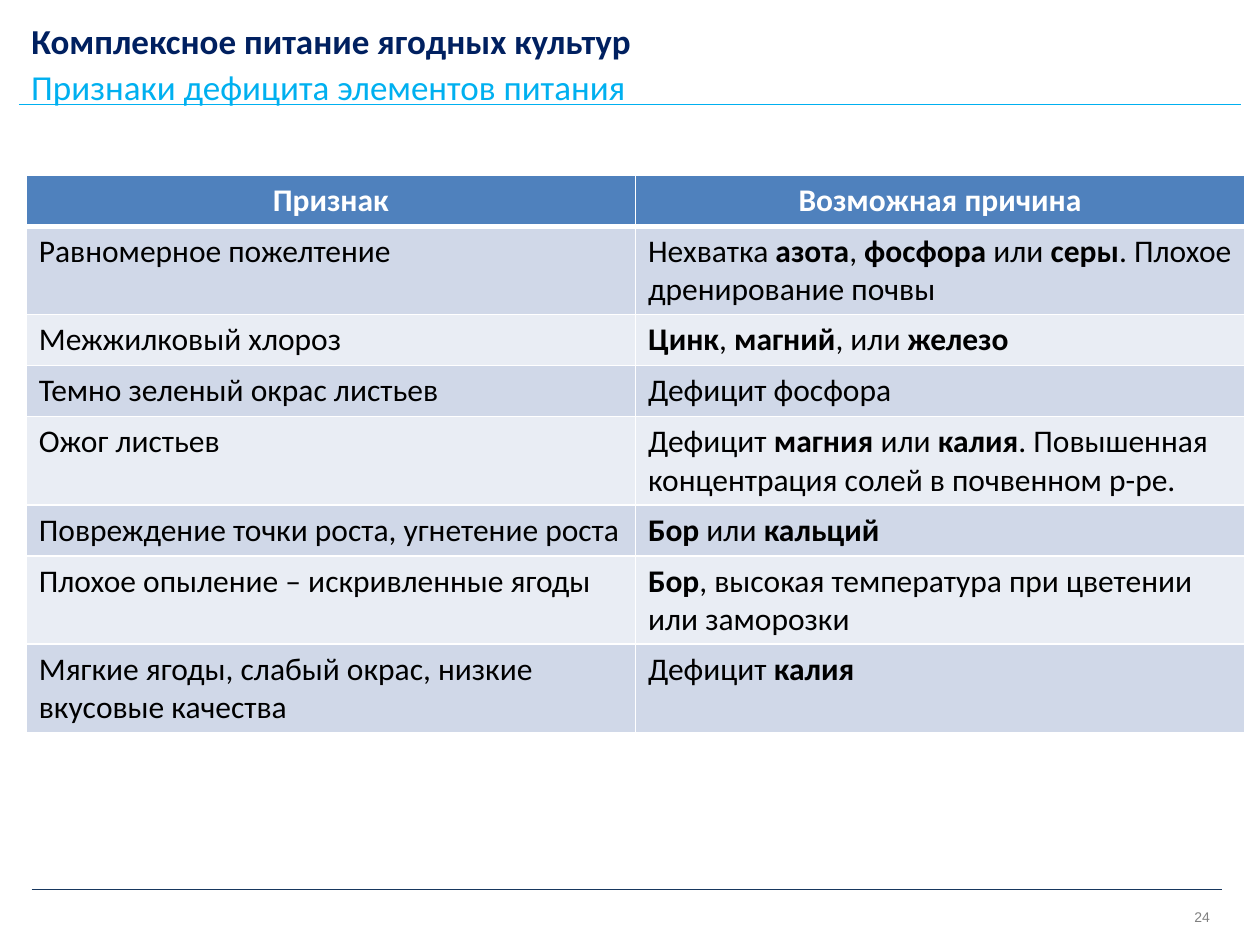
from dataclasses import dataclass
from lxml.etree import SubElement
from pptx import Presentation
from pptx.dml.color import RGBColor
from pptx.enum.shapes import MSO_CONNECTOR
from pptx.enum.text import MSO_ANCHOR, PP_ALIGN
from pptx.oxml.ns import qn
from pptx.util import Cm, Pt

# Content: asterisks enclose the bold words
TITLE = "Комплексное питание ягодных культур"
SUBTITLE = "Признаки дефицита элементов питания"
PAGE_NUMBER = "24"
HEADER = ("Признак", "Возможная причина")
SYMPTOMS = [
    ("Равномерное пожелтение",
     "Нехватка *азота*, *фосфора* или *серы*. Плохое дренирование почвы"),
    ("Межжилковый хлороз", "*Цинк*, *магний*, или *железо*"),
    ("Темно зеленый окрас листьев", "Дефицит фосфора"),
    ("Ожог листьев",
     "Дефицит *магния* или *калия*. Повышенная концентрация солей в почвенном р-ре."),
    ("Повреждение точки роста, угнетение роста", "*Бор* или *кальций*"),
    ("Плохое опыление – искривленные ягоды",
     "*Бор*, высокая температура при цветении или заморозки"),
    ("Мягкие ягоды, слабый окрас, низкие вкусовые качества", "Дефицит *калия*"),
]


@dataclass(frozen=True)
class Theme:
    font: str = "Calibri"
    number_font: str = "Arial"
    navy: str = "002060"
    cyan: str = "00B0F0"
    footer_line: str = "17375E"
    gray: str = "808080"
    white: str = "FFFFFF"
    black: str = "000000"
    header_fill: str = "4F81BD"
    bands: tuple = ("D0D8E8", "E9EDF4")
    heading_size: int = 20
    table_size: int = 18
    number_size: int = 8


THEME = Theme()
LEFT = 0.53
TABLE_TOP, TABLE_WIDTH, ROW_HEIGHT = 3.53, 24.56, 1.03


def style(paragraph, size, color, bold=False, font=THEME.font, align=PP_ALIGN.LEFT):
    paragraph.alignment = align
    paragraph.font.name = font
    paragraph.font.size = Pt(size)
    paragraph.font.bold = bold
    paragraph.font.color.rgb = RGBColor.from_string(color)


def set_heading(heading, text, top, width, color, bold):
    heading.left, heading.top = Cm(LEFT), Cm(top)
    heading.width, heading.height = Cm(width), Cm(0.86)
    frame = heading.text_frame
    frame.word_wrap = True
    frame.vertical_anchor = MSO_ANCHOR.MIDDLE
    frame.margin_left, frame.margin_top = Cm(0.1), Cm(0.1)
    frame.margin_right = frame.margin_bottom = 0
    frame.text = text
    style(frame.paragraphs[0], THEME.heading_size, color, bold)


def add_rule(slide, left, right, y, color):
    rule = slide.shapes.add_connector(
        MSO_CONNECTOR.STRAIGHT, Cm(left), Cm(y), Cm(right), Cm(y))
    rule.line.color.rgb = RGBColor.from_string(color)
    rule.line.width = Pt(0.75)
    SubElement(rule.element.spPr, qn("a:effectLst"))


def set_borders(cell, top=1, bottom=1):
    properties = cell._tc.get_or_add_tcPr()
    for side, width in (("L", 1), ("R", 1), ("T", top), ("B", bottom)):
        border = SubElement(properties, qn(f"a:ln{side}"), w=str(Pt(width)))
        fill = SubElement(border, qn("a:solidFill"))
        SubElement(fill, qn("a:srgbClr"), val=THEME.white)


def fill_cell(cell, text, row):
    is_header = row == 0
    set_borders(cell, top=3 if row == 1 else 1, bottom=3 if is_header else 1)
    cell.fill.solid()
    cell.fill.fore_color.rgb = RGBColor.from_string(
        THEME.header_fill if is_header else THEME.bands[(row - 1) % 2])
    paragraph = cell.text_frame.paragraphs[0]
    style(paragraph, THEME.table_size, THEME.white if is_header else THEME.black,
          bold=is_header, align=PP_ALIGN.CENTER if is_header else PP_ALIGN.LEFT)
    for index, part in enumerate(text.split("*")):
        if part:
            run = paragraph.add_run()
            run.text = part
            if index % 2:
                run.font.bold = True


def main():
    deck = Presentation()
    deck.slide_width, deck.slide_height = Cm(25.4), Cm(19.05)
    slide = deck.slides.add_slide(deck.slide_layouts[5])

    # Rules above the footer and below the headings
    add_rule(slide, 0.64, 24.64, 17.93, THEME.footer_line)
    add_rule(slide, 0.38, 25.02, 2.11, THEME.cyan)

    # Headings
    set_heading(slide.shapes.title, TITLE, 0.33, 22.2, THEME.navy, True)
    subtitle = slide.shapes.add_textbox(0, 0, 0, 0)
    set_heading(subtitle, SUBTITLE, 1.27, 20.5, THEME.cyan, False)

    # Symptom table
    rows = [HEADER, *SYMPTOMS]
    table = slide.shapes.add_table(
        len(rows), len(HEADER), Cm(LEFT), Cm(TABLE_TOP),
        Cm(TABLE_WIDTH), Cm(ROW_HEIGHT * len(rows))).table
    for row, texts in enumerate(rows):
        for column, text in enumerate(texts):
            fill_cell(table.cell(row, column), text, row)

    # Page number
    number = slide.shapes.add_textbox(Cm(18.72), Cm(18.19), Cm(5.92), Cm(1.02))
    number.text_frame.word_wrap = True
    number.text_frame.text = PAGE_NUMBER
    style(number.text_frame.paragraphs[0], THEME.number_size, THEME.gray,
          font=THEME.number_font, align=PP_ALIGN.RIGHT)

    deck.save("out.pptx")


if __name__ == "__main__":
    main()
